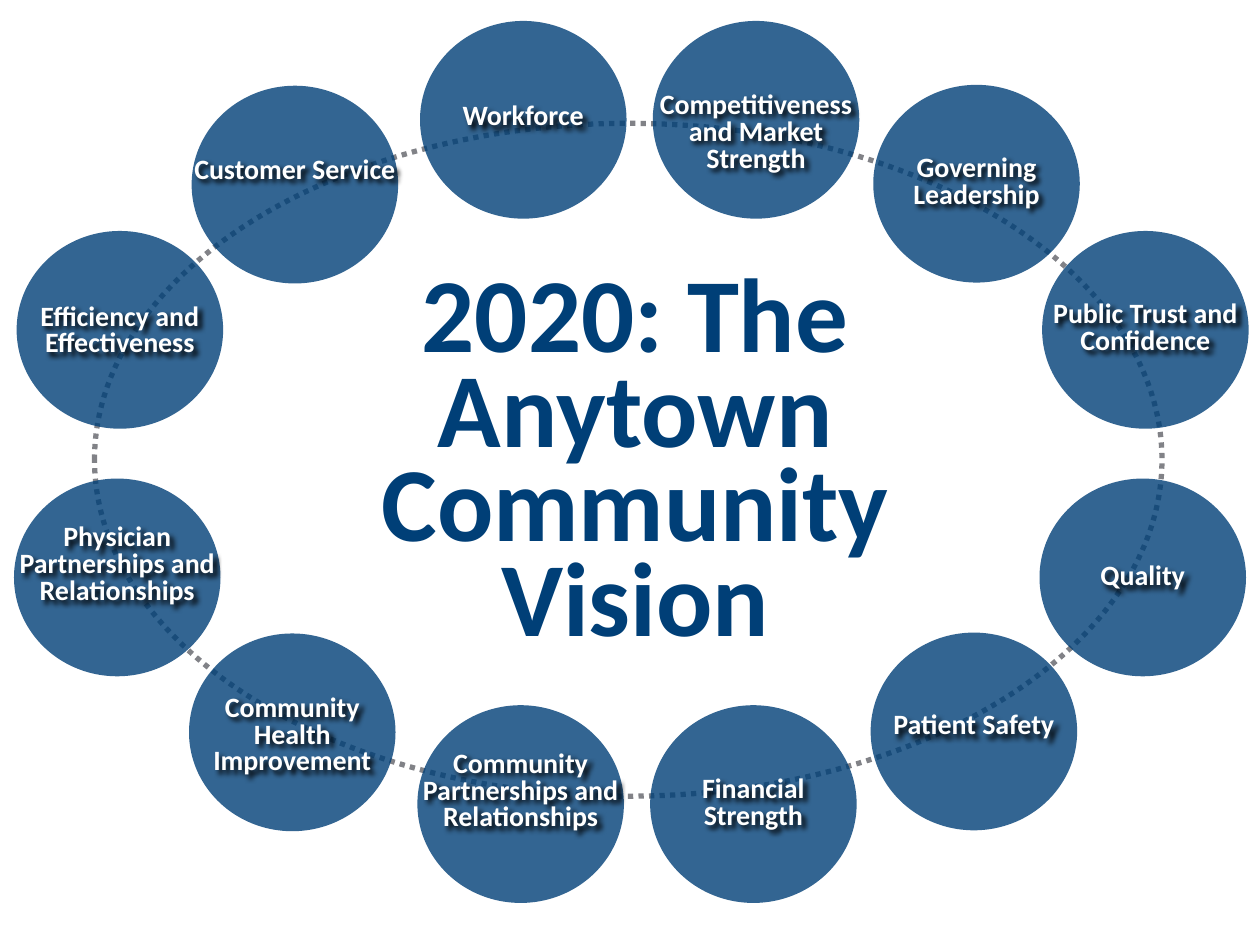
from lxml.etree import SubElement
from pptx import Presentation
from pptx.dml.color import RGBColor
from pptx.enum.dml import MSO_LINE
from pptx.enum.shapes import MSO_SHAPE as Shape
from pptx.enum.text import MSO_ANCHOR as Anchor, MSO_AUTO_SIZE as AutoSize, PP_ALIGN as Align
from pptx.oxml.ns import qn
from pptx.util import Pt

NAVY, GRAY, WHITE, BLACK = "003F77", "818287", "FFFFFF", "000000"
FONT = "Calibri"
CIRCLE_W, CIRCLE_H = 118, 113
LABEL_W = 132
LABEL_HEIGHTS = {1: 23, 2: 39, 3: 54, 4: 70}

# The six columns run left to right; the lower row sits slightly further left
COLUMNS = [9.5, 109.5, 240, 373, 499, 595.5]
LOWER_SHIFT = -1.5

# Circle top, label offset from it, label box lines, wording
UPPER = [
    (132, 38.5, 2, "Efficiency and Effectiveness"),
    (49, 37.5, 2, "Customer Service"),
    (12, 44, 1, "Workforce"),
    (12, 37.5, 3, "Competitiveness and Market Strength"),
    (48.5, 37, 2, "Governing Leadership"),
    (132, 37, 2, "Public Trust and Confidence"),
]
LOWER = [
    (273.5, 23, 4, "Physician Partnerships and Relationships"),
    (362, 32, 3, "Community Health Improvement"),
    (403, 23, 4, "Community Partnerships and Relationships"),
    (403, 37.5, 2, "Financial Strength"),
    (361.5, 42.5, 1, "Patient Safety"),
    (273.5, 45.5, 1, "Quality"),
]


def rgb(value):
    return RGBColor.from_string(value)


def write(tf, text, size, color, spacing):
    tf.word_wrap = True
    p = tf.paragraphs[0]
    p.alignment = Align.CENTER
    p.line_spacing = spacing
    r = p.add_run()
    r.text = text
    r.font.name = FONT
    r.font.size = Pt(size)
    r.font.bold = True
    r.font.color.rgb = rgb(color)


def add_text_shadow(box):
    effects = SubElement(box._element.spPr, qn("a:effectLst"))
    shadow = SubElement(effects, qn("a:outerShdw"), blurRad=str(Pt(3)),
                        dist=str(Pt(3)), dir="2700000", algn="tl", rotWithShape="0")
    SubElement(shadow, qn("a:srgbClr"), val=BLACK)


def add_ring(slide):
    ring = slide.shapes.add_shape(Shape.OVAL, Pt(54), Pt(70.5), Pt(610), Pt(384.5))
    ring.shadow.inherit = False
    ring.fill.background()
    ring.line.color.rgb = rgb(GRAY)
    ring.line.width = Pt(3)
    ring.line.dash_style = MSO_LINE.ROUND_DOT


def add_title(slide):
    title = slide.shapes.title
    title.left, title.top = Pt(144), Pt(213)
    title.width, title.height = Pt(438), Pt(106.5)
    tf = title.text_frame
    tf.auto_size = AutoSize.NONE
    tf.vertical_anchor = Anchor.MIDDLE
    write(tf, "2020: The Anytown Community Vision", 60, NAVY, 0.75)


def add_goal(slide, left, top, label_offset, lines, text):
    group = slide.shapes.add_group_shape()

    # Translucent circle
    circle = group.shapes.add_shape(Shape.OVAL, Pt(left), Pt(top), Pt(CIRCLE_W), Pt(CIRCLE_H))
    circle.shadow.inherit = False
    circle.fill.solid()
    circle.fill.fore_color.rgb = rgb(NAVY)
    color = circle._element.spPr.find(qn("a:solidFill"))[0]
    SubElement(color, qn("a:alpha"), val="80000")
    circle.line.fill.background()

    # Label, a little wider than the circle
    box = group.shapes.add_textbox(Pt(left - (LABEL_W - CIRCLE_W) / 2), Pt(top + label_offset),
                                   Pt(LABEL_W), Pt(LABEL_HEIGHTS[lines]))
    tf = box.text_frame
    tf.auto_size = AutoSize.SHAPE_TO_FIT_TEXT
    write(tf, text, 16, WHITE, 0.8)
    add_text_shadow(box)


def main():
    prs = Presentation()
    prs.slide_width, prs.slide_height = Pt(720), Pt(540)
    slide = prs.slides.add_slide(prs.slide_layouts[5])
    add_title(slide)
    add_ring(slide)
    for goals, shift in ((UPPER, 0), (LOWER, LOWER_SHIFT)):
        for left, goal in zip(COLUMNS, goals):
            add_goal(slide, left + shift, *goal)
    prs.save("out.pptx")


if __name__ == "__main__":
    main()
